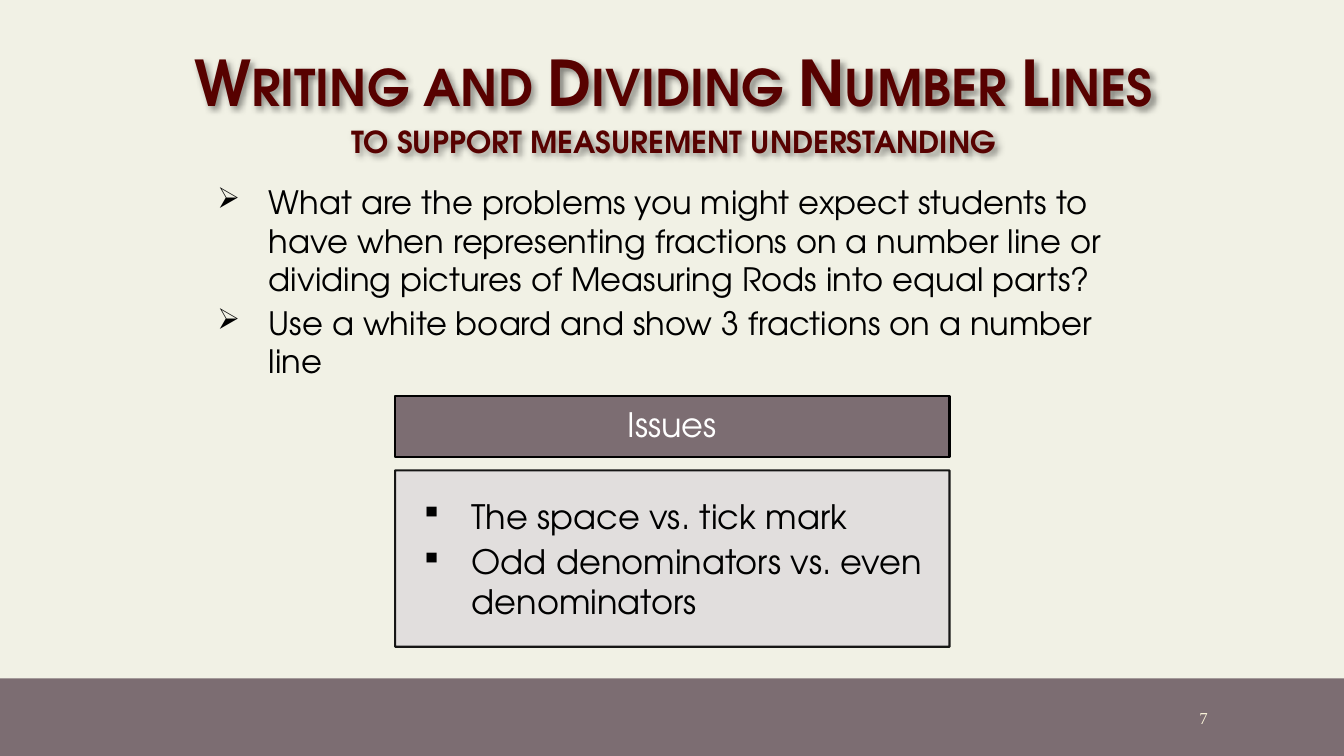
from dataclasses import dataclass
from lxml.etree import SubElement
from pptx import Presentation
from pptx.dml.color import RGBColor
from pptx.enum.shapes import MSO_SHAPE
from pptx.enum.text import MSO_ANCHOR, PP_ALIGN
from pptx.oxml.ns import qn
from pptx.util import Pt


@dataclass(frozen=True)
class Theme:
    paper: str = "F1F1E5"
    mauve: str = "7C6D72"
    pale: str = "E0DCDD"
    maroon: str = "570100"
    cream: str = "FAF3D9"
    black: str = "000000"
    white: str = "FFFFFF"
    face: str = "TeX Gyre Adventor"
    serif: str = "Times New Roman"
    head: float = 45
    sub: float = 27
    box: float = 24
    body: float = 23
    note: float = 12
    rule: float = 1.5
    indent: float = 36.72


def color(code):
    return RGBColor.from_string(code)


class Deck:
    def __init__(self, theme):
        self.theme = theme
        self.show = Presentation()
        self.show.slide_width, self.show.slide_height = Pt(960), Pt(540)
        self.slide = self.show.slides.add_slide(self.show.slide_layouts[6])
        fill = self.slide.background.fill
        fill.solid()
        fill.fore_color.rgb = color(theme.paper)

    def style(self, run, size, ink, face=None):
        run.font.size = Pt(size)
        run.font.name = face or self.theme.face
        run.font.color.rgb = color(ink)

    def text(self, area):
        shape = self.slide.shapes.add_textbox(*map(Pt, area))
        shape.text_frame.word_wrap = True
        return shape

    def rect(self, area, fill, line=None, alpha=None):
        """Draw a rectangle; alpha is the opacity of fill and line in percent."""
        shape = self.slide.shapes.add_shape(MSO_SHAPE.RECTANGLE, *map(Pt, area))
        shape.shadow.inherit = False
        shape.fill.solid()
        shape.fill.fore_color.rgb = color(fill)
        if line:
            shape.line.color.rgb = color(line)
            shape.line.width = Pt(self.theme.rule)
        else:
            shape.line.fill.background()
        if alpha:
            for tint in shape.element.spPr.iter(qn("a:srgbClr")):
                SubElement(tint, qn("a:alpha"), val=str(alpha * 1000))
        frame = shape.text_frame
        frame.word_wrap = True
        frame.vertical_anchor = MSO_ANCHOR.MIDDLE
        return shape

    def pad(self, frame, left, top, right, bottom):
        frame.margin_left, frame.margin_top = Pt(left), Pt(top)
        frame.margin_right, frame.margin_bottom = Pt(right), Pt(bottom)

    def line(self, frame, words, size, ink, align, face=None):
        para = frame.paragraphs[0]
        para.text = words
        para.alignment = align
        for run in para.runs:
            self.style(run, size, ink, face)
        return para

    def title(self, area, head, sub):
        theme = self.theme
        shape = self.text(area)
        frame = shape.text_frame
        frame.vertical_anchor = MSO_ANCHOR.MIDDLE
        para = self.line(frame, f"{head}\v{sub}", theme.head, theme.maroon, PP_ALIGN.CENTER)
        para.line_spacing = 0.9
        for run, size in zip(para.runs, (theme.head, theme.sub)):
            run.font.size = Pt(size)
            run.font.bold = True
            run.font._element.set("cap", "small")
        self.shade(shape)

    def shade(self, shape):
        """Give an unfilled text box a soft shadow that follows its letters."""
        shape.shadow.inherit = False
        effect = shape.element.spPr.find(qn("a:effectLst"))
        outer = SubElement(effect, qn("a:outerShdw"), blurRad=str(Pt(4)),
                           dist=str(Pt(3)), dir="2700000", algn="tl", rotWithShape="0")
        tint = SubElement(outer, qn("a:srgbClr"), val=self.theme.black)
        SubElement(tint, qn("a:alpha"), val="43000")

    def bullets(self, frame, items, mark, size):
        frame.text = "\n".join(items)
        step = Pt(self.theme.indent)
        for para in frame.paragraphs:
            para.alignment = PP_ALIGN.LEFT
            para.space_after = Pt(round(size * 0.15, 1))
            props = para._p.get_or_add_pPr()
            props.set("marL", str(step))
            props.set("indent", str(-step))
            SubElement(props, qn("a:buSzPct"), val="90000")
            SubElement(props, qn("a:buChar"), char=mark)
            for run in para.runs:
                self.style(run, size, self.theme.black)


def main():
    theme = Theme()
    deck = Deck(theme)
    deck.rect((0, 484.5, 960, 55.5), theme.mauve)
    deck.title((41.75, 23, 879, 106.5), "Writing and Dividing Number Lines",
               "to support measurement understanding")

    page = deck.text((735, 498.25, 134.75, 28.75)).text_frame
    page.vertical_anchor = MSO_ANCHOR.MIDDLE
    deck.line(page, "7", theme.note, theme.cream, PP_ALIGN.RIGHT, theme.serif)

    left, width = 282.25, 396
    label = deck.rect((left, 283, width, 43.5), theme.mauve, theme.black).text_frame
    deck.pad(label, 14.4, 8.64, 14.4, 8.64)
    para = deck.line(label, "Issues", theme.box, theme.white, PP_ALIGN.CENTER)
    para.line_spacing = 0.9

    issues = deck.rect((left, 336, width, 126), theme.pale, theme.black, 90).text_frame
    deck.pad(issues, 18, 14.4, 14.4, 14.4)
    deck.bullets(issues, ("The space vs. tick mark",
                          "Odd denominators vs. even denominators"), "▪", theme.box)

    tasks = deck.text((148.25, 126.75, 663, 150.5)).text_frame
    deck.bullets(tasks, (
        "What are the problems you might expect students to have when representing "
        "fractions on a number line or dividing pictures of Measuring Rods into equal parts?",
        "Use a white board and show 3 fractions on a number line"), "➢", theme.body)
    deck.show.save("out.pptx")


if __name__ == "__main__":
    main()
